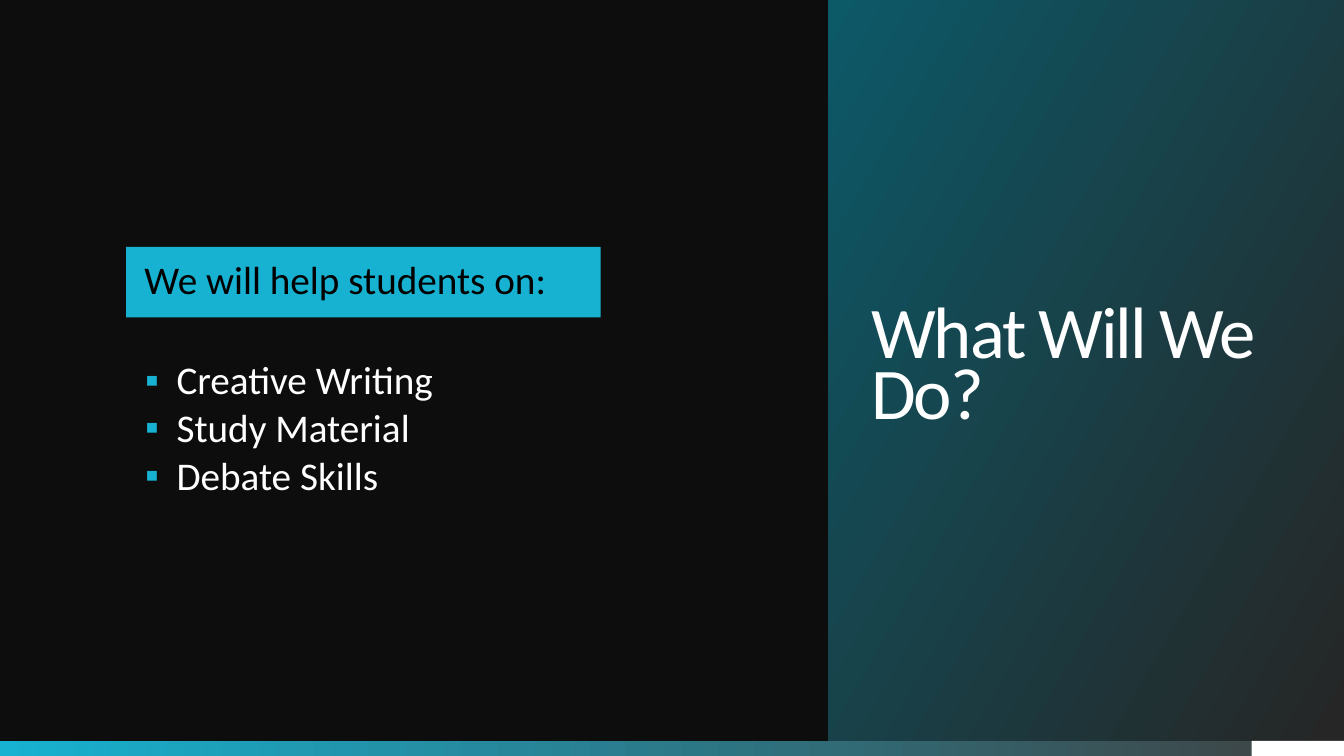
from dataclasses import dataclass

from lxml import etree
from pptx import Presentation
from pptx.dml.color import RGBColor
from pptx.enum.shapes import MSO_SHAPE
from pptx.enum.text import MSO_ANCHOR, MSO_AUTO_SIZE, PP_ALIGN
from pptx.oxml.ns import qn
from pptx.util import Cm, Pt

RECT = MSO_SHAPE.RECTANGLE
TOP, MIDDLE = MSO_ANCHOR.TOP, MSO_ANCHOR.MIDDLE
LEFT = PP_ALIGN.LEFT
NO_FIT = MSO_AUTO_SIZE.NONE
TITLE_ONLY = 5
WIDTH, HEIGHT, BAR = 33.87, 19.05, 0.38
BAR_TOP = HEIGHT - BAR
PANEL_LEFT = 20.87


@dataclass(frozen=True)
class Theme:
    """Hold the colours, font and type sizes of the slide."""
    font: str = "Calibri"
    title: int = 52
    body: int = 28
    back: str = "0D0D0D"
    accent: str = "17B2D1"
    grey: str = "404040"
    dark: str = "262626"
    teal: str = "0C5968"
    white: str = "FFFFFF"
    black: str = "000000"


class Builder:
    """Draw styled elements on the current slide."""

    def __init__(self, prs, theme):
        """Add a title-only slide with its background."""
        self.theme = theme
        self.s = prs.slides.add_slide(prs.slide_layouts[TITLE_ONLY])
        self.solid(self.s.background.fill, theme.back)

    def solid(self, fill, color):
        """Fill with one colour."""
        fill.solid()
        fill.fore_color.rgb = RGBColor.from_string(color)

    def gradient(self, fill, stops, angle):
        """Fill with a two-colour linear gradient."""
        fill.gradient()
        fill.gradient_angle = angle
        for stop, (position, color) in zip(fill.gradient_stops, stops):
            stop.position = position
            stop.color.rgb = RGBColor.from_string(color)

    def rect(self, *box):
        """Add a rectangle without line or shadow."""
        sp = self.s.shapes.add_shape(RECT, *map(Cm, box))
        sp.shadow.inherit = False
        sp.line.fill.background()
        return sp

    def bullet(self, p):
        """Give a paragraph a hanging square bullet."""
        pPr = p._p.get_or_add_pPr()
        pPr.set("marL", str(Cm(0.79)))
        pPr.set("indent", str(-Cm(0.79)))
        color = etree.SubElement(pPr, qn("a:buClr"))
        etree.SubElement(color, qn("a:srgbClr"), val=self.theme.accent)
        etree.SubElement(pPr, qn("a:buFont"), typeface="Arial")
        etree.SubElement(pPr, qn("a:buChar"), char="▪")

    def text(self, sp, lines, size, color, insets, anchor, spacing, after=0, bullets=False):
        """Write formatted paragraphs into a shape."""
        tf = sp.text_frame
        left, top, right, bottom = map(Cm, insets)
        frame = {"word_wrap": True, "auto_size": NO_FIT, "vertical_anchor": anchor,
                 "margin_left": left, "margin_top": top,
                 "margin_right": right, "margin_bottom": bottom}
        for name, value in frame.items():
            setattr(tf, name, value)
        layout = {"alignment": LEFT, "line_spacing": spacing,
                  "space_before": Pt(0), "space_after": Pt(after)}
        for i, line in enumerate(lines):
            p = tf.paragraphs[0] if i == 0 else tf.add_paragraph()
            if bullets:
                self.bullet(p)
            for name, value in layout.items():
                setattr(p, name, value)
            r = p.add_run()
            r.text = line
            r.font.name, r.font.size = self.theme.font, Pt(size)
            r.font.color.rgb = RGBColor.from_string(color)

    def title(self, line, *box):
        """Place the title on its gradient panel."""
        t, sp = self.theme, self.s.shapes.title
        for name, value in zip(("left", "top", "width", "height"), box):
            setattr(sp, name, Cm(value))
        self.gradient(sp.fill, ((0.01, t.dark), (1, t.teal)), 150)
        self.text(sp, [line], t.title, t.white, (1.09, 0.13, 1.09, 0.13), MIDDLE, 0.7)
        r = sp.text_frame.paragraphs[0].runs[0]
        r.font._element.set("spc", "-150")

    def bullets(self, lines, *box):
        """Add a bulleted text box."""
        t, sp = self.theme, self.s.shapes.add_textbox(*map(Cm, box))
        self.text(sp, lines, t.body, t.white, (1.32, 3.76, 1.32, 0.56), TOP, 0.9, 4, True)

    def banner(self, line, *box):
        """Add an accent rectangle with a heading."""
        t, sp = self.theme, self.rect(*box)
        self.solid(sp.fill, t.accent)
        self.text(sp, [line], t.body, t.black, (0.46, 0, 0.46, 0), MIDDLE, 0.9)

    def footer(self):
        """Add the gradient bar and its white end block."""
        t = self.theme
        bar = self.rect(0, BAR_TOP, WIDTH, BAR)
        self.gradient(bar.fill, ((0, t.accent), (1, t.grey)), 0)
        self.solid(self.rect(31.54, BAR_TOP, WIDTH - 31.54, BAR).fill, t.white)


def main():
    """Build and save the slide."""
    prs = Presentation()
    prs.slide_width, prs.slide_height = Cm(WIDTH), Cm(HEIGHT)
    b = Builder(prs, Theme())
    b.footer()
    b.title("What Will We Do?", PANEL_LEFT, 0, WIDTH - PANEL_LEFT, BAR_TOP)
    b.bullets(["Creative Writing", "Study Material", "Debate Skills"], 2.34, 5.33, 17.09, 7.95)
    b.banner("We will help students on:", 3.18, 6.22, 11.96, 1.78)
    prs.save("out.pptx")


if __name__ == "__main__":
    main()
